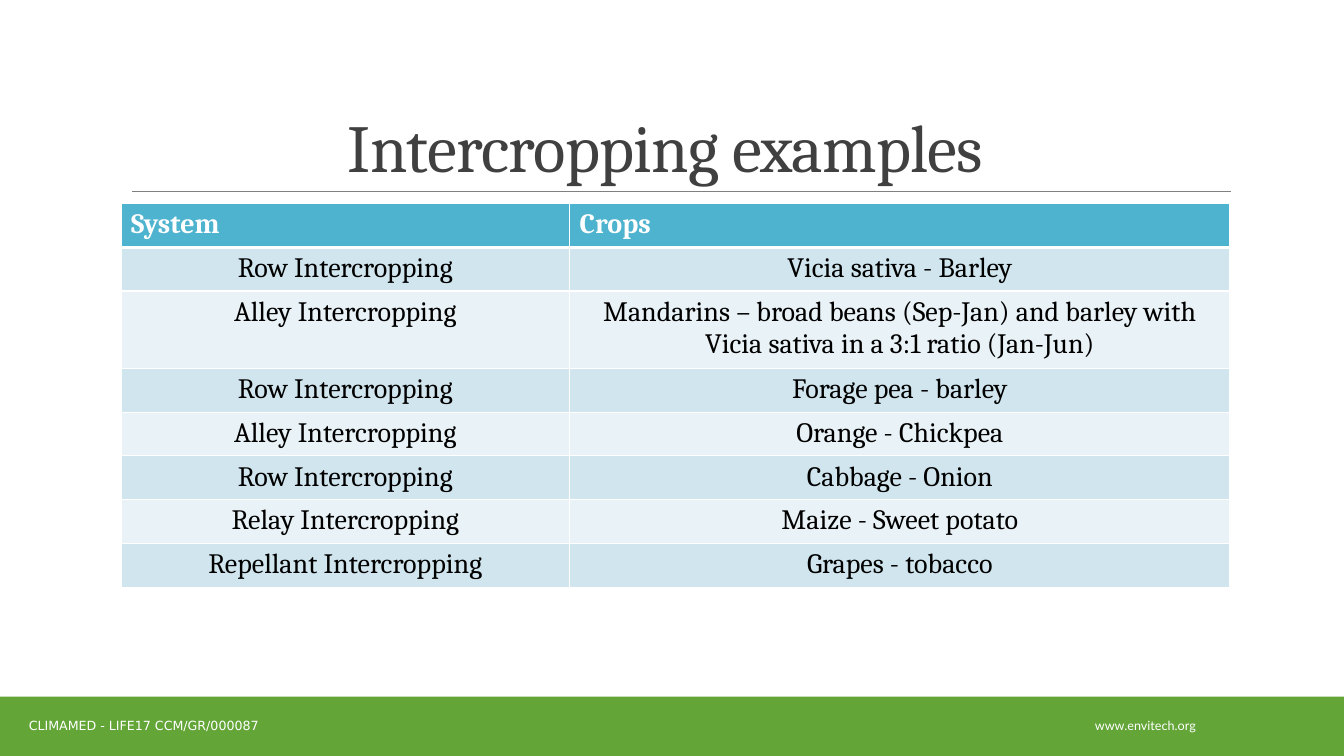
from lxml import etree
from pptx import Presentation
from pptx.dml.color import RGBColor
from pptx.enum.shapes import MSO_CONNECTOR as Connector, MSO_SHAPE as Shape
from pptx.enum.text import MSO_ANCHOR as Anchor, PP_ALIGN as Align
from pptx.oxml.ns import qn
from pptx.util import Inches, Pt

WHITE, BLACK, GREY, TITLE_GREY = "FFFFFF", "000000", "808080", "404040"
GREEN, HEADER_BLUE, BANDS = "63A537", "4EB3CF", ("D0E5ED", "E9F2F6")


def paint(target, color):
    """Colour a fill solid, or set a font colour."""
    if hasattr(target, "solid"):
        target.solid()
        target = target.fore_color
    else:
        target = target.color
    target.rgb = RGBColor.from_string(color)


def write(frame, text, color, align, **font_format):
    """Put one formatted line of text into a text frame."""
    frame.word_wrap = True
    line = frame.paragraphs[0]
    line.alignment = align
    run = line.add_run()
    run.text = text
    for key, value in font_format.items():
        setattr(run.font, key, value)
    paint(run.font, color)
    return line


deck = Presentation()
deck.slide_width, deck.slide_height = Inches(13.33), Inches(7.5)
slide = deck.slides.add_slide(deck.slide_layouts[6])
shapes = slide.shapes

# Shared grid: content starts at left and is content_width wide
left, content_width = Inches(1.2), Inches(11)
rule_y, footer_y = Inches(1.9), Inches(6.91)

# Rule under the title
rule = shapes.add_connector(Connector.STRAIGHT, Inches(1.31), rule_y, Inches(12.21), rule_y)
rule.line.width = Pt(0.5)
paint(rule.line.fill, GREY)
etree.SubElement(rule._element.spPr, qn("a:effectLst"))

# Footer band with project code and web address
footer = shapes.add_shape(Shape.RECTANGLE, 0, footer_y, deck.slide_width, deck.slide_height - footer_y)
footer.shadow.inherit = False
paint(footer.fill, GREEN)
footer.line.fill.background()

footer_notes = [
    ("www.envitech.org", "Lato", 10.13, 2.46),
    ("CLIMAMED - LIFE17 CCM/GR/000087", "DejaVu Sans", -0.16, 3.17),
]
for text, font_name, x, width in footer_notes:
    note = shapes.add_textbox(Inches(x), Inches(7), Inches(width), Inches(0.4)).text_frame
    note.vertical_anchor = Anchor.MIDDLE
    write(note, text, WHITE, Align.CENTER, name=font_name, size=Pt(9))

# Title
title_top = Inches(0.31)
title = shapes.add_textbox(left, title_top, content_width, rule_y - title_top).text_frame
title.vertical_anchor = Anchor.BOTTOM
heading = write(title, "Intercropping examples\t", TITLE_GREY, Align.CENTER, name="Cambria", size=Pt(48))
heading.line_spacing = 0.85
heading.runs[0].font._element.set("spc", "-50")

# Table of intercropping systems
systems = [
    ("System", "Crops"),
    ("Row Intercropping", "Vicia sativa - Barley"),
    ("Alley Intercropping",
     "Mandarins – broad beans (Sep-Jan) and barley with Vicia sativa in a 3:1 ratio (Jan-Jun)"),
    ("Row Intercropping", "Forage pea - barley"),
    ("Alley Intercropping", "Orange - Chickpea"),
    ("Row Intercropping", "Cabbage - Onion"),
    ("Relay Intercropping", "Maize - Sweet potato"),
    ("Repellant Intercropping", "Grapes - tobacco"),
]
row_height = Inches(0.41)
table = shapes.add_table(len(systems), 2, left, Inches(2.02), content_width,
                         row_height * len(systems)).table
for column, width in zip(table.columns, (4.45, 6.55)):
    column.width = Inches(width)

for r, entries in enumerate(systems):
    table.rows[r].height = row_height
    is_header = r == 0
    for c, entry in enumerate(entries):
        cell = table.cell(r, c)
        write(cell.text_frame, entry, WHITE if is_header else BLACK,
              Align.LEFT if is_header else Align.CENTER,
              name="Cambria", size=Pt(20), bold=is_header)
        # White borders come before the fill; the header edge is thicker
        header_edge = {"lnB": 3} if is_header else {"lnT": 3} if r == 1 else {}
        for side in ("lnL", "lnR", "lnT", "lnB"):
            border = etree.SubElement(cell._tc.get_or_add_tcPr(), qn(f"a:{side}"),
                                      w=str(Pt(header_edge.get(side, 1))))
            border_fill = etree.SubElement(border, qn("a:solidFill"))
            etree.SubElement(border_fill, qn("a:srgbClr"), val=WHITE)
        paint(cell.fill, HEADER_BLUE if is_header else BANDS[(r - 1) % 2])

deck.save("out.pptx")
